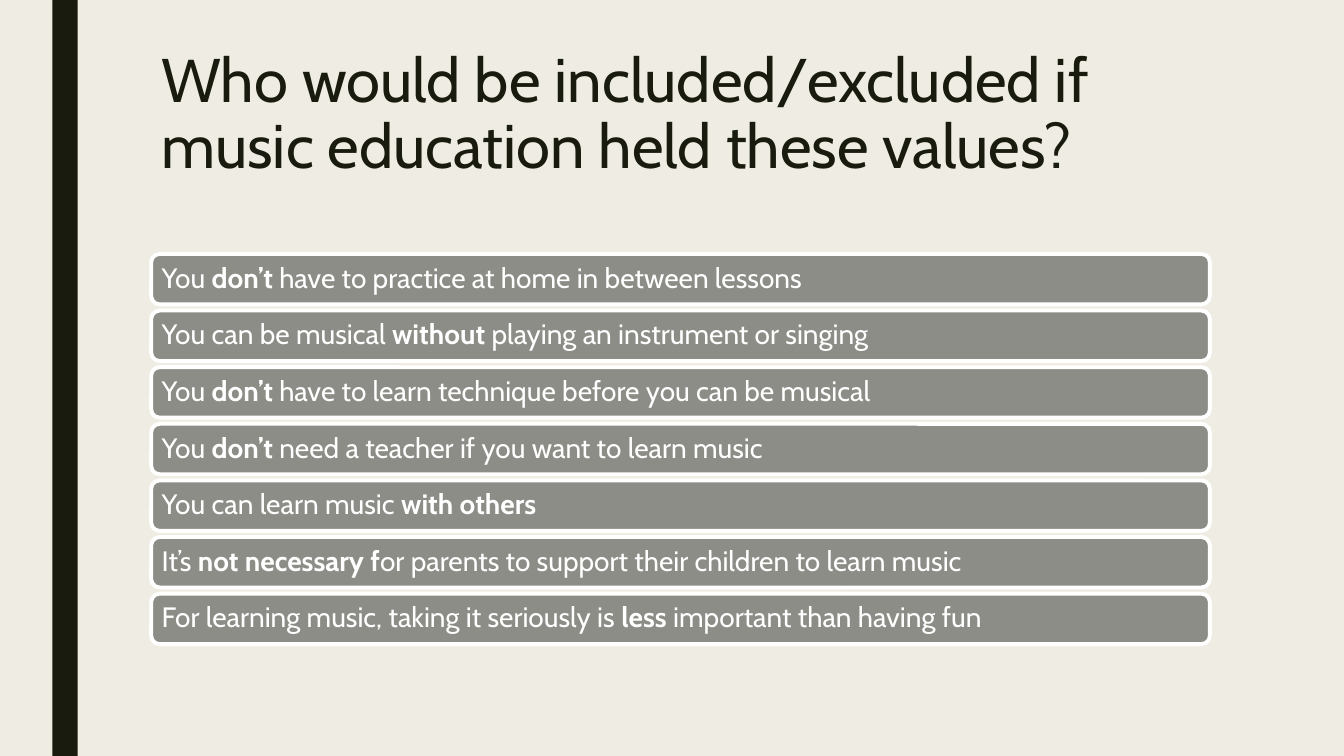
"""Build a slide that lists seven values of music education in bars."""
from dataclasses import dataclass

from pptx import Presentation
from pptx.dml.color import RGBColor
from pptx.enum import shapes, text
from pptx.util import Inches, Pt


@dataclass(frozen=True)
class Theme:
    font: str = "Cabin"
    back: RGBColor = RGBColor(0xEF, 0xED, 0xE3)
    dark: RGBColor = RGBColor(0x19, 0x1B, 0x0E)
    bar: RGBColor = RGBColor(0x8C, 0x8D, 0x86)
    white: RGBColor = RGBColor(0xFF, 0xFF, 0xFF)
    head: float = 44
    body: float = 20
    edge: float = 2.75


@dataclass(frozen=True)
class Box:
    left: float
    top: float
    width: float
    height: float

    def emu(self) -> tuple:
        return tuple(map(Inches, (self.left, self.top, self.width, self.height)))


@dataclass(frozen=True)
class Value:
    start: str
    bold: str
    end: str = ""


THEME = Theme()
LEFT, WIDTH = 1.5, 10.5
TOP, LAST, TALL = 2.52, 5.89, 0.5
TITLE = "Who would be included/excluded if music education held these values?"
VALUES = [
    Value("You ", "don’t ", "have to practice at home in between lessons"),
    Value("You can be musical ", "without ", "playing an instrument or singing"),
    Value("You ", "don’t ", "have to learn technique before you can be musical"),
    Value("You ", "don’t ", "need a teacher if you want to learn music"),
    Value("You can learn music ", "with others"),
    Value("It’s ", "not necessary f", "or parents to support their children to learn music"),
    Value("For learning music, taking it seriously is ", "less", " important than having fun"),
]


def style(run, size: float, color: RGBColor, bold: bool = False) -> None:
    run.font.name = THEME.font
    run.font.size = Pt(size)
    run.font.color.rgb = color
    run.font.bold = bold


def shape(slide, kind, box: Box, fill: RGBColor):
    item = slide.shapes.add_shape(kind, *box.emu())
    item.shadow.inherit = False
    item.fill.solid()
    item.fill.fore_color.rgb = fill
    return item


def stripe(slide) -> None:
    item = shape(slide, shapes.MSO_SHAPE.RECTANGLE, Box(0.52, 0, 0.25, 7.5), THEME.dark)
    item.line.fill.background()


def title(slide) -> None:
    frame = slide.shapes.add_textbox(*Box(LEFT, 0.45, WIDTH, 1.62).emu()).text_frame
    frame.word_wrap = True
    frame.text = TITLE
    para = frame.paragraphs[0]
    para.line_spacing = 0.89
    style(para.runs[0], THEME.head, THEME.dark)


def row(slide, value: Value, top: float) -> None:
    box = Box(LEFT, top, WIDTH, TALL)
    item = shape(slide, shapes.MSO_SHAPE.ROUNDED_RECTANGLE, box, THEME.bar)
    item.line.color.rgb = THEME.white
    item.line.width = Pt(THEME.edge)
    frame = item.text_frame
    frame.word_wrap = True
    frame.vertical_anchor = text.MSO_ANCHOR.MIDDLE
    frame.margin_left = frame.margin_right = Inches(0.08)
    frame.margin_top = frame.margin_bottom = Inches(0.08)
    para = frame.paragraphs[0]
    para.alignment = text.PP_ALIGN.LEFT
    para.line_spacing = 0.9
    for part, bold in ((value.start, False), (value.bold, True), (value.end, False)):
        if part:
            run = para.add_run()
            run.text = part
            style(run, THEME.body, THEME.white, bold)


def main() -> None:
    deck = Presentation()
    deck.slide_width, deck.slide_height = Inches(13.33), Inches(7.5)
    slide = deck.slides.add_slide(deck.slide_layouts[6])
    slide.background.fill.solid()
    slide.background.fill.fore_color.rgb = THEME.back
    stripe(slide)
    title(slide)
    step = (LAST - TOP) / (len(VALUES) - 1)
    for index, value in enumerate(VALUES):
        row(slide, value, TOP + index * step)
    deck.save("out.pptx")


if __name__ == "__main__":
    main()
